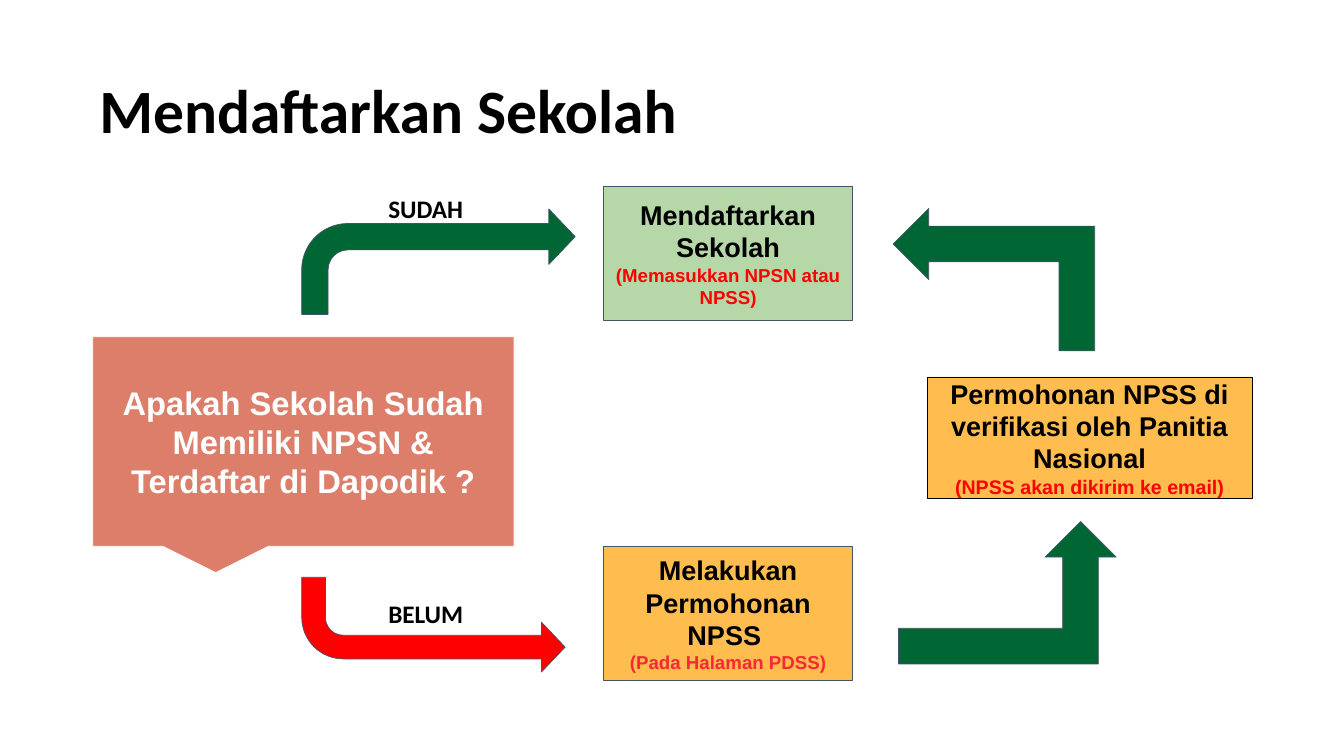
from pptx import Presentation
from pptx.dml.color import RGBColor
from pptx.enum import shapes, text
from pptx.util import Inches, Pt

BLACK = RGBColor(0x00, 0x00, 0x00)
WHITE = RGBColor(0xFF, 0xFF, 0xFF)
RED = RGBColor(0xFF, 0x00, 0x00)
ROSE = RGBColor(0xF9, 0x27, 0x36)
GREEN = RGBColor(0x00, 0x66, 0x34)
LIGHT_GREEN = RGBColor(0xB6, 0xD7, 0xA8)
ORANGE = RGBColor(0xFF, 0xBD, 0x4F)
SALMON = RGBColor(0xDD, 0x7E, 0x6B)
SLATE = RGBColor(0x44, 0x54, 0x6A)

KIND = shapes.MSO_SHAPE
MIDDLE = text.MSO_ANCHOR.MIDDLE
CENTER = text.PP_ALIGN.CENTER
BEND = (0.25, 0.263, 0.25, 0.438)
CORNER = (0.25, 0.25, 0.25)


def write(shape, lines, font="Arial", align=None, anchor=None, inset=0.1, spacing=None):
    """Fill a shape with bold paragraphs given as (words, size, colour)."""
    frame = shape.text_frame
    side, edge = Inches(0.1), Inches(inset)
    frame_format = {"word_wrap": True, "vertical_anchor": anchor,
                    "margin_left": side, "margin_right": side,
                    "margin_top": edge, "margin_bottom": edge}
    for name, value in frame_format.items():
        setattr(frame, name, value)
    for index, (words, size, colour) in enumerate(lines):
        para = frame.add_paragraph() if index else frame.paragraphs[0]
        para.alignment = align
        para.line_spacing = spacing
        span = para.add_run()
        span.text = words
        for name, value in {"name": font, "size": Pt(size), "bold": True}.items():
            setattr(span.font, name, value)
        span.font.color.rgb = colour


def add_figure(page, kind, place, fill, line=SLATE, adjust=()):
    figure = page.shapes.add_shape(kind, *map(Inches, place))
    figure.shadow.inherit = False
    figure.fill.solid()
    figure.fill.fore_color.rgb = fill
    figure.line.color.rgb = line
    figure.line.width = Pt(0.75)
    for index, value in enumerate(adjust):
        figure.adjustments[index] = value
    return figure


def add_step(page, place, fill, lines, line=SLATE, kind=KIND.RECTANGLE, adjust=()):
    box = add_figure(page, kind, place, fill, line, adjust)
    write(box, lines, align=CENTER, anchor=MIDDLE)


def add_arrow(page, kind, place, fill, adjust, rotation=0, mirrored=False):
    arrow = add_figure(page, kind, place, fill, adjust=adjust)
    arrow.rotation = rotation
    if mirrored:
        arrow._element.spPr.xfrm.set("flipH", "1")


def add_label(page, place, words, size, **layout):
    box = page.shapes.add_textbox(*map(Inches, place))
    write(box, [(words, size, BLACK)], font="Calibri", **layout)


def main():
    deck = Presentation()
    deck.slide_width, deck.slide_height = Inches(20), Inches(11.25)
    page = deck.slides.add_slide(deck.slide_layouts[6])

    # Title
    add_label(page, (1.38, 0.6, 17.25, 2.17), "Mendaftarkan Sekolah", 66,
              anchor=MIDDLE, inset=0.05, spacing=0.9)

    # Opening question
    question = "Apakah Sekolah Sudah Memiliki NPSN & Terdaftar di Dapodik ?"
    add_step(page, (1.38, 5.01, 6.27, 3.12), SALMON, [(question, 35, WHITE)], WHITE,
             KIND.ROUNDED_RECTANGULAR_CALLOUT, (-0.208, 0.625, 0))

    # Arrows out of the question
    add_arrow(page, KIND.BENT_ARROW, (4.49, 3.11, 4.07, 1.57), GREEN, BEND)
    add_arrow(page, KIND.BENT_ARROW, (4.49, 8.59, 3.92, 1.41), RED, BEND, 180, True)

    # Steps
    add_step(page, (8.98, 2.77, 3.71, 2), LIGHT_GREEN,
             [("Mendaftarkan Sekolah", 29, BLACK),
              ("(Memasukkan NPSN atau NPSS)", 20, RED)])
    add_step(page, (8.98, 8.13, 3.71, 2), ORANGE,
             [("Melakukan Permohonan NPSS ", 29, BLACK),
              ("(Pada Halaman PDSS)", 20, ROSE)])
    add_step(page, (13.8, 5.61, 4.83, 1.8), ORANGE,
             [("Permohonan NPSS di verifikasi oleh Panitia Nasional", 29, BLACK),
              ("(NPSS akan dikirim ke email)", 21, RED)], BLACK)

    # Arrows into and out of the verification step
    add_arrow(page, KIND.BENT_UP_ARROW, (13.37, 7.76, 3.24, 2.12), GREEN, CORNER)
    add_arrow(page, KIND.BENT_UP_ARROW, (13.73, 2.66, 2.12, 3), GREEN, CORNER, 270)

    # Answers
    for words, top in (("SUDAH", 2.77), ("BELUM", 8.8)):
        add_label(page, (5.68, top, 1.54, 0.66), words, 27)

    deck.save("out.pptx")


if __name__ == "__main__":
    main()
